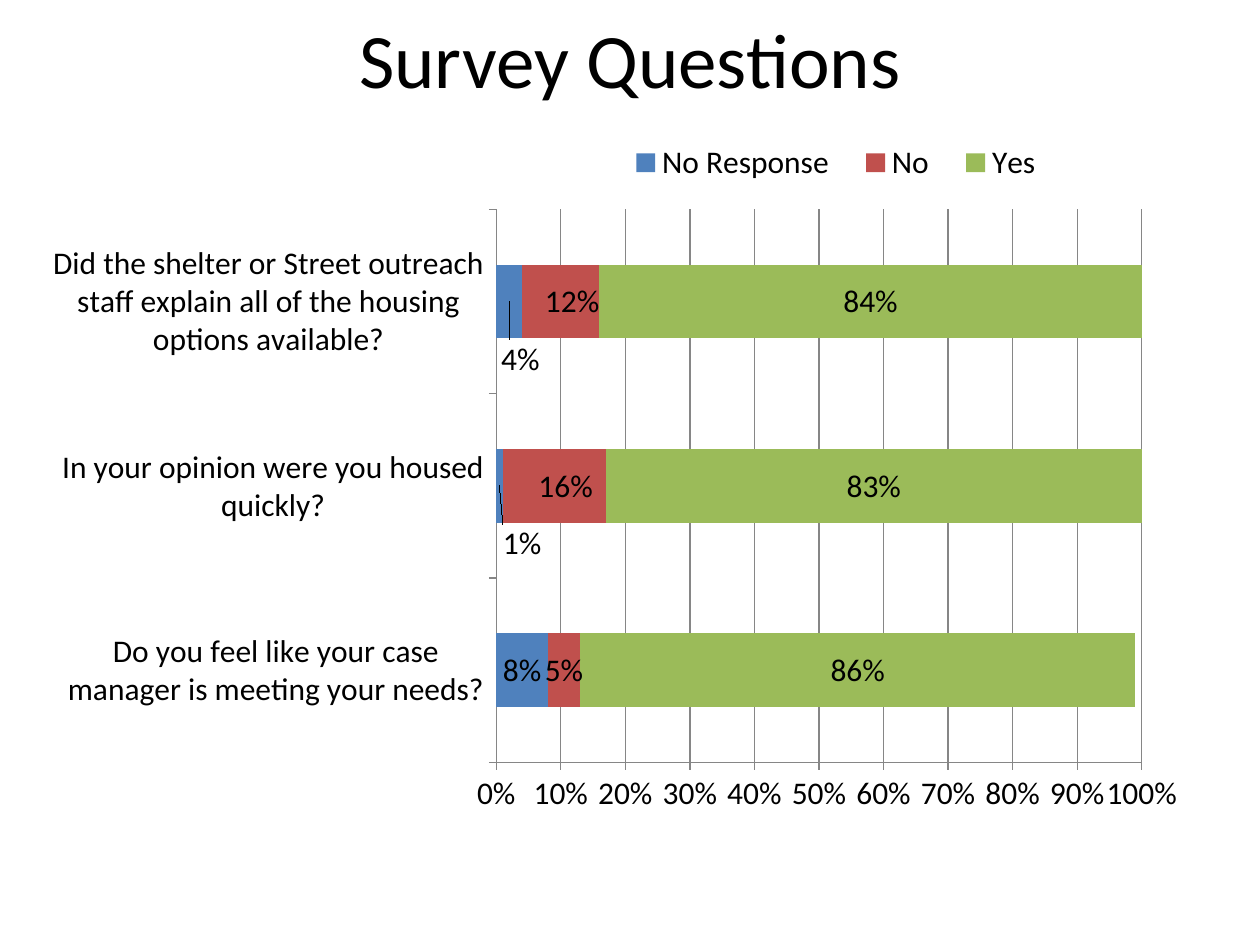
from lxml import etree
from pptx import Presentation
from pptx.chart.data import CategoryChartData
from pptx.dml.color import RGBColor
from pptx.enum.chart import XL_CHART_TYPE as ChartType
from pptx.enum.chart import XL_LABEL_POSITION as LabelPosition
from pptx.enum.chart import XL_LEGEND_POSITION as LegendPosition
from pptx.enum.chart import XL_TICK_MARK as TickMark
from pptx.enum.text import MSO_ANCHOR as Anchor
from pptx.enum.text import PP_ALIGN as Align
from pptx.oxml.ns import qn
from pptx.util import Cm, Pt

COLORS = {"text": "000000", "line": "868686", "No Response": "4F81BD", "No": "C0504D", "Yes": "9BBB59"}
FONT = "Calibri"
QUESTIONS = [
    "Do you feel like your case manager is meeting your needs?",
    "In your opinion were you housed quickly?",
    "Did the shelter or Street outreach staff explain all of the housing options available?",
]
ANSWERS = {
    "No Response": [0.08, 0.01, 0.04],
    "No": [0.05, 0.16, 0.12],
    "Yes": [0.86, 0.83, 0.84],
}
LABEL_OFFSETS = {
    "No Response": {1: (0.02, 0.08), 2: (0.01, 0.08)},
    "No": {1: (0.01, 0), 2: (0.01, 0)},
}


def style_font(font, size):
    font.name = FONT
    font.size = Pt(size)
    font.color.rgb = RGBColor.from_string(COLORS["text"])


def make_layout(**settings):
    layout = etree.Element(qn("c:layout"))
    manual = etree.SubElement(layout, qn("c:manualLayout"))
    for name, value in settings.items():
        etree.SubElement(manual, qn(f"c:{name}"), val=str(value))
    return layout


presentation = Presentation()
presentation.slide_width = Cm(25.4)
presentation.slide_height = Cm(19.05)
slide = presentation.slides.add_slide(presentation.slide_layouts[6])

title = slide.shapes.add_textbox(Cm(1.27), Cm(-0.43), Cm(22.86), Cm(3.18))
title_frame = title.text_frame
title_frame.word_wrap = True
title_frame.vertical_anchor = Anchor.MIDDLE
title_frame.text = "Survey Questions"
paragraph = title_frame.paragraphs[0]
paragraph.alignment = Align.CENTER
style_font(paragraph.runs[0].font, 44)

chart_data = CategoryChartData(number_format="0%")
chart_data.categories = QUESTIONS
for answer, shares in ANSWERS.items():
    chart_data.add_series(answer, shares)
chart = slide.shapes.add_chart(
    ChartType.BAR_STACKED, Cm(1.07), Cm(2.34), Cm(22.86), Cm(14.48), chart_data
).chart
style_font(chart.font, 18)
chart.has_title = False

plot = chart.plots[0]
plot.gap_width = 150
plot.overlap = 100
plot.vary_by_categories = False
for series in plot.series:
    series.format.fill.solid()
    series.format.fill.fore_color.rgb = RGBColor.from_string(COLORS[series.name])
    labels = series.data_labels
    labels.show_value = True
    labels.number_format = "0%"
    labels.number_format_is_linked = False
    labels.position = LabelPosition.CENTER
    style_font(labels.font, 18)
    for index, (x, y) in LABEL_OFFSETS.get(series.name, {}).items():
        label = series.points[index].data_label
        style_font(label.font, 18)
        label.position = LabelPosition.CENTER
        label_index = series._element.xpath(f"c:dLbls/c:dLbl/c:idx[@val='{index}']")[0]
        label_index.addnext(make_layout(x=x, y=y))

value_axis = chart.value_axis
value_axis.minimum_scale = 0
value_axis.maximum_scale = 1
value_axis.major_unit = 0.1
value_axis.has_major_gridlines = True
value_axis.tick_labels.number_format = "0%"
value_axis.tick_labels.number_format_is_linked = False
for axis in (value_axis, chart.category_axis):
    axis.major_tick_mark = TickMark.OUTSIDE
    style_font(axis.tick_labels.font, 18)
for part in (value_axis, chart.category_axis, value_axis.major_gridlines):
    part.format.line.color.rgb = RGBColor.from_string(COLORS["line"])
    part.format.line.width = Pt(0.75)

chart.has_legend = True
legend = chart.legend
legend.position = LegendPosition.RIGHT
legend.include_in_layout = False
style_font(legend.font, 18)
legend._element.find(qn("c:legendPos")).addnext(
    make_layout(xMode="edge", yMode="edge", x=0.49, y=0.03, w=0.4, h=0.07)
)

plot_area = plot._element.getparent()
for layout in plot_area.findall(qn("c:layout")):
    plot_area.remove(layout)
plot_area.insert(
    0, make_layout(layoutTarget="inner", xMode="edge", yMode="edge", x=0.39, y=0.13, w=0.57, h=0.77)
)

presentation.save("out.pptx")
